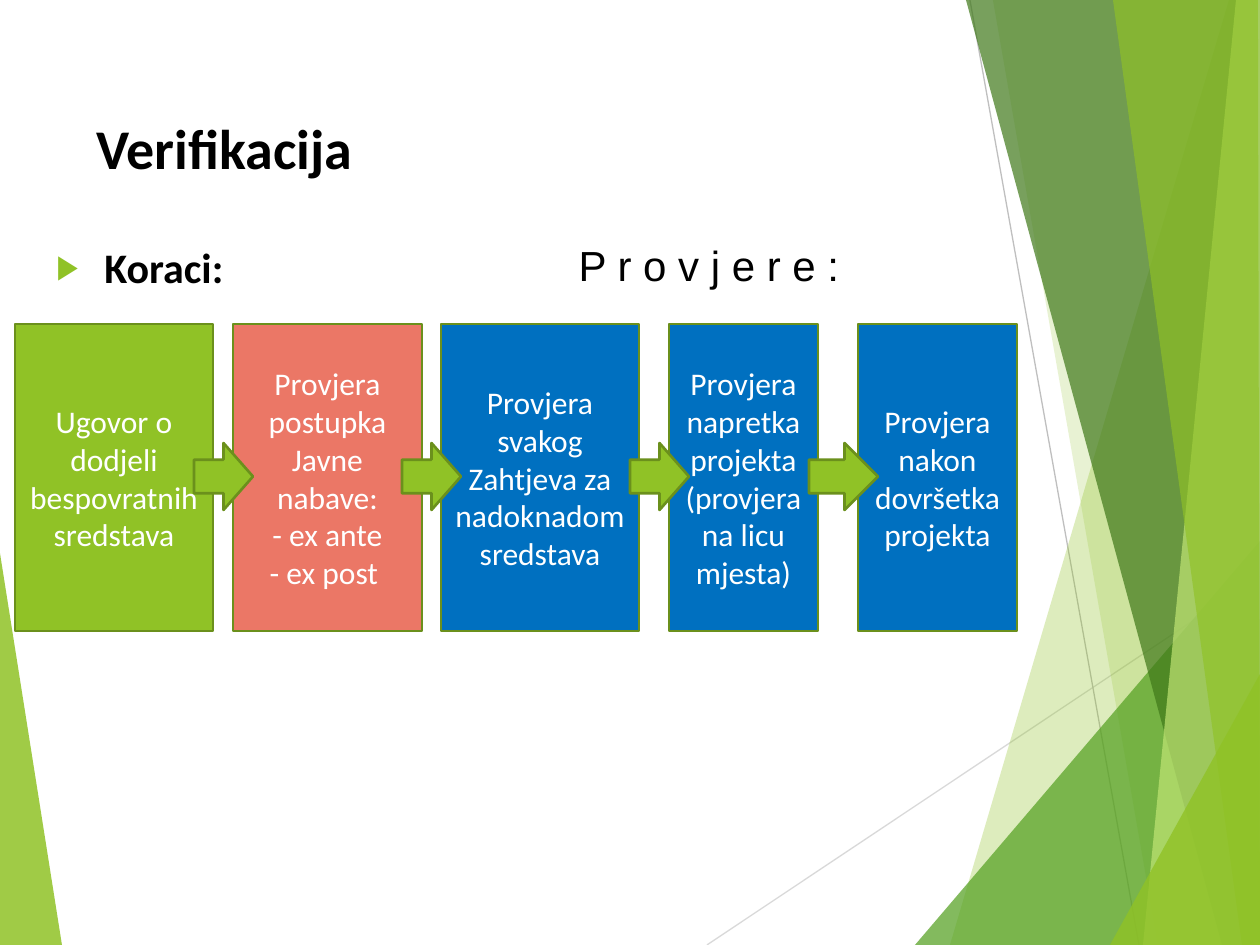
from lxml import etree
from pptx import Presentation
from pptx.dml.color import RGBColor
from pptx.enum.shapes import MSO_CONNECTOR, MSO_SHAPE
from pptx.enum.text import MSO_ANCHOR, PP_ALIGN
from pptx.oxml.ns import qn
from pptx.util import Pt

PX = 914400 // 126
WIDTH, HEIGHT = 1260, 945
RECTANGLE, ARROW = MSO_SHAPE.RECTANGLE, MSO_SHAPE.RIGHT_ARROW
STRAIGHT = MSO_CONNECTOR.STRAIGHT
LEFT, CENTER = PP_ALIGN.LEFT, PP_ALIGN.CENTER
TOP, MIDDLE = MSO_ANCHOR.TOP, MSO_ANCHOR.MIDDLE

GREEN, CORAL, BLUE, OUTLINE = "90C226", "EB7766", "0070C0", "6B901C"
BLACK, WHITE = "000000", "FFFFFF"

# colour, opacity in percent, corners
LEFT_FACET = (GREEN, 85, [(0, 553), (62, HEIGHT), (0, HEIGHT)])
RIGHT_FACETS = [
    (GREEN, 30, [(1229, 0), (950, HEIGHT), (WIDTH, HEIGHT), (WIDTH, 0)]),
    (GREEN, 20, [(993, 0), (1158, HEIGHT), (WIDTH, HEIGHT), (WIDTH, 0)]),
    ("54A021", 72, [(915, HEIGHT), (WIDTH, 541), (WIDTH, HEIGHT)]),
    ("3F7819", 70, [(966, 0), (1222, HEIGHT), (WIDTH, HEIGHT), (WIDTH, 0)]),
    ("C0E474", 70, [(1236, 0), (1143, HEIGHT), (WIDTH, HEIGHT), (WIDTH, 0)]),
    (GREEN, 65, [(1113, 0), (1242, HEIGHT), (WIDTH, HEIGHT), (1258, 0)]),
    (GREEN, 80, [(1110, HEIGHT), (WIDTH, 674), (WIDTH, HEIGHT)]),
]
THIN_LINES = [("D9D9D9", (707, HEIGHT), (WIDTH, 576)),
              ("BFBFBF", (970, 0), (1139, HEIGHT))]

# left, width, fill, text
STEPS = [
    (15, 198, GREEN, "Ugovor o dodjeli bespovratnih sredstava"),
    (233, 189, CORAL, "Provjera postupka Javne nabave:\n- ex ante\n- ex post "),
    (441, 198, BLUE, "Provjera svakog Zahtjeva za nadoknadom sredstava"),
    (669, 149, BLUE, "Provjera napretka projekta (provjera na licu mjesta)"),
    (858, 159, BLUE, "Provjera nakon dovršetka projekta"),
]
STEP_TOP, STEP_HEIGHT = 324, 307
ARROW_WIDTHS = [59, 59, 59, 69]
ARROW_HEIGHT, ARROW_OVERLAP = 67, 20


def rgb(color):
    return RGBColor.from_string(color)


def emu(*lengths):
    return [length * PX for length in lengths]


def add_facet(slide, color, opacity, corners):
    builder = slide.shapes.build_freeform(*corners[0], scale=PX)
    builder.add_line_segments(corners[1:], close=True)
    shape = builder.convert_to_shape()
    shape.shadow.inherit = False
    shape.line.fill.background()
    shape.fill.solid()
    shape.fill.fore_color.rgb = rgb(color)
    color_element = shape.fill._xPr.find(".//" + qn("a:srgbClr"))
    etree.SubElement(color_element, qn("a:alpha"), val=str(opacity * 1000))


def add_thin_line(slide, color, start, end):
    line = slide.shapes.add_connector(STRAIGHT, *emu(*start, *end))
    line.line.color.rgb = rgb(color)
    line.line.width = Pt(0.75)
    etree.SubElement(line._element.spPr, qn("a:effectLst"))


def write(shape, text, size, color, font="Calibri", bold=False,
          align=LEFT, anchor=TOP):
    frame = shape.text_frame
    frame.word_wrap = True
    frame.vertical_anchor = anchor
    frame.text = text
    for paragraph in frame.paragraphs:
        paragraph.alignment = align
        for run in paragraph.runs:
            run.font.name = font
            run.font.size = Pt(size)
            run.font.bold = bold
            run.font.color.rgb = rgb(color)


def add_text(slide, box, text, size, inset_top=6, **style):
    shape = slide.shapes.add_textbox(*emu(*box))
    shape.text_frame.margin_top = inset_top * PX
    write(shape, text, size, BLACK, **style)
    return shape


def add_bullet(paragraph):
    properties = paragraph._p.get_or_add_pPr()
    indent = 48 * PX
    properties.set("marL", str(indent))
    properties.set("indent", str(-indent))
    bullet_color = etree.SubElement(properties, qn("a:buClr"))
    etree.SubElement(bullet_color, qn("a:srgbClr"), val=GREEN)
    etree.SubElement(properties, qn("a:buSzPct"), val="80000")
    etree.SubElement(properties, qn("a:buFont"), typeface="Arial")
    etree.SubElement(properties, qn("a:buChar"), char="▶")


def add_outlined(slide, kind, box, fill):
    shape = slide.shapes.add_shape(kind, *emu(*box))
    shape.shadow.inherit = False
    shape.fill.solid()
    shape.fill.fore_color.rgb = rgb(fill)
    shape.line.color.rgb = rgb(OUTLINE)
    shape.line.width = Pt(1.5)
    return shape


def add_steps(slide):
    for left, width, fill, text in STEPS:
        step = add_outlined(slide, RECTANGLE, (left, STEP_TOP, width, STEP_HEIGHT), fill)
        write(step, text, 18, WHITE, align=CENTER, anchor=MIDDLE)
    arrow_top = STEP_TOP + (STEP_HEIGHT - ARROW_HEIGHT) // 2 - 1
    for width, (next_left, *_) in zip(ARROW_WIDTHS, STEPS[1:]):
        left = next_left + ARROW_OVERLAP - width
        add_outlined(slide, ARROW, (left, arrow_top, width, ARROW_HEIGHT), GREEN)


def main():
    presentation = Presentation()
    presentation.slide_width, presentation.slide_height = emu(WIDTH, HEIGHT)
    slide = presentation.slides.add_slide(presentation.slide_layouts[6])

    add_facet(slide, *LEFT_FACET)
    for line in THIN_LINES:
        add_thin_line(slide, *line)
    for facet in RIGHT_FACETS:
        add_facet(slide, *facet)

    add_text(slide, (84, 34, 908, 131), "Verifikacija", 32, inset_top=79, bold=True)
    steps_label = add_text(slide, (44, 165, 948, 753), "Koraci:", 24,
                           inset_top=77, bold=True)
    add_bullet(steps_label.text_frame.paragraphs[0])
    add_steps(slide)
    add_text(slide, (491, 234, 436, 63), "P r o v j e r e :", 24,
             font="Arial", align=CENTER)

    presentation.save("out.pptx")


if __name__ == "__main__":
    main()
